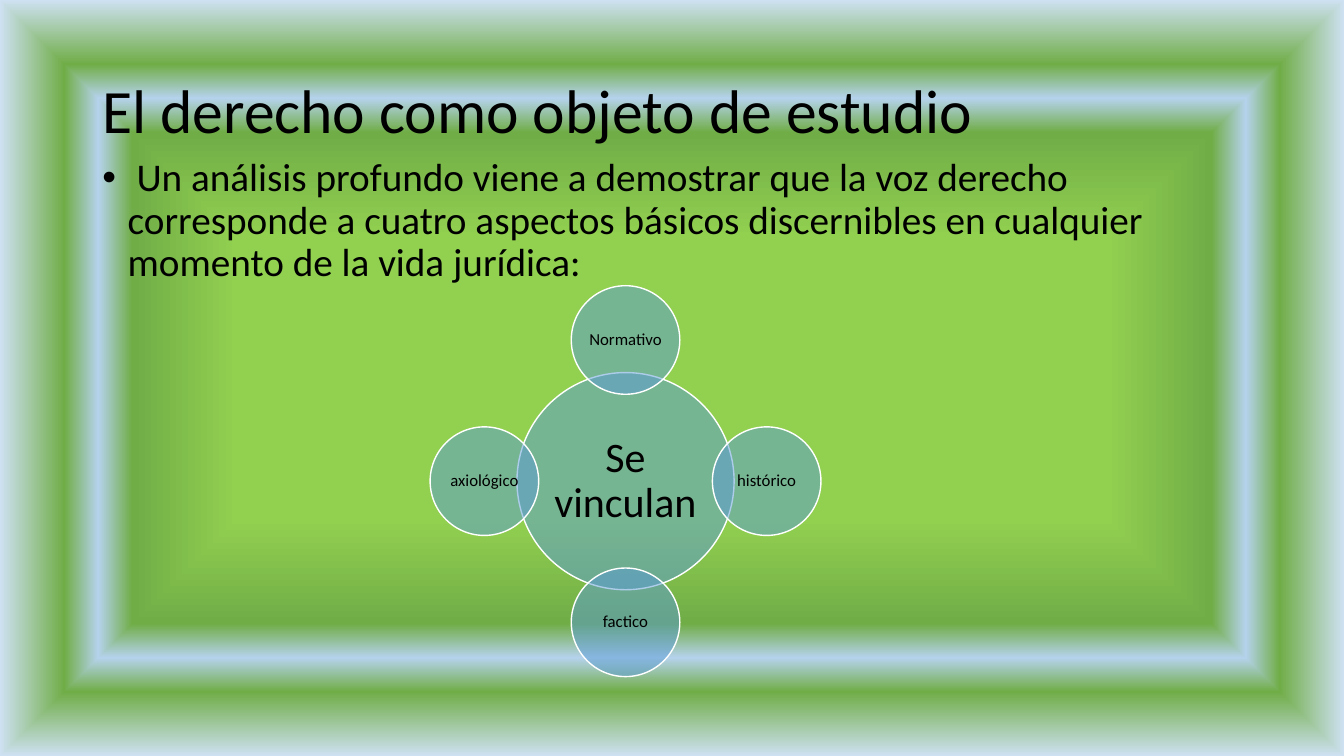
import math

from pptx import Presentation
from pptx import util as u
from pptx.dml.color import RGBColor
from pptx.enum import shapes, text
from pptx.oxml import parse_xml
from pptx.oxml.ns import nsdecls, qn

FONT = "Calibri"
BLACK = "000000"
WHITE = "FFFFFF"
BLUE = "5B9BD5"
GRADIENT = [(0, "92D050"), (37, "92D050"), (65, "70AD47"),
            (74, "B5D2EC"), (83, "70AD47"), (100, "CEE1F2")]
ASPECTS = ["Normativo", "histórico", "factico", "axiológico"]


def color(value):
    return RGBColor.from_string(value)


def paint_background(slide):
    fill = slide.background.fill
    fill.solid()
    stops = "".join(
        f'<a:gs pos="{position * 1000}"><a:srgbClr val="{value}"/></a:gs>'
        for position, value in GRADIENT)
    gradient = parse_xml(
        f'<a:gradFill {nsdecls("a")} rotWithShape="1"><a:gsLst>{stops}</a:gsLst>'
        '<a:path path="shape"><a:fillToRect l="50000" t="50000" r="50000" b="50000"/>'
        '</a:path></a:gradFill>')
    properties = slide.element.find(".//" + qn("p:bgPr"))
    properties.replace(properties[0], gradient)


def write(shape, words, size, anchor, alignment):
    frame = shape.text_frame
    frame.word_wrap = True
    frame.vertical_anchor = anchor
    frame.text = words
    paragraph = frame.paragraphs[0]
    paragraph.alignment = alignment
    paragraph.line_spacing = 0.9
    font = paragraph.runs[0].font
    font.name = FONT
    font.size = u.Pt(size)
    font.color.rgb = color(BLACK)
    return paragraph


def add_title(slide, left, top, width, height):
    box = slide.shapes.add_textbox(*map(u.Cm, (left, top, width, height)))
    write(box, "El derecho como objeto de estudio", 44,
          text.MSO_ANCHOR.MIDDLE, text.PP_ALIGN.LEFT)


def add_body(slide, left, top, width, height):
    box = slide.shapes.add_textbox(*map(u.Cm, (left, top, width, height)))
    paragraph = write(
        box,
        " Un análisis profundo viene a demostrar que la voz derecho corresponde a "
        "cuatro aspectos básicos discernibles en cualquier momento de la vida jurídica:",
        28, text.MSO_ANCHOR.TOP, text.PP_ALIGN.LEFT)
    paragraph.space_before = u.Pt(10)
    properties = paragraph._p.get_or_add_pPr()
    indent = u.Cm(0.64)
    properties.set("marL", str(indent))
    properties.set("indent", str(-indent))
    properties.append(parse_xml(f'<a:buFont {nsdecls("a")} typeface="Arial"/>'))
    properties.append(parse_xml(f'<a:buChar {nsdecls("a")} char="•"/>'))


def add_circle(slide, center_x, center_y, diameter, words, size, inset):
    circle = slide.shapes.add_shape(
        shapes.MSO_SHAPE.OVAL, u.Cm(center_x - diameter / 2),
        u.Cm(center_y - diameter / 2), u.Cm(diameter), u.Cm(diameter))
    circle.shadow.inherit = False
    circle.fill.solid()
    circle.fill.fore_color.rgb = color(BLUE)
    circle.fill._xPr.find(".//" + qn("a:srgbClr")).append(
        parse_xml(f'<a:alpha {nsdecls("a")} val="50000"/>'))
    circle.line.color.rgb = color(WHITE)
    circle.line.width = u.Pt(1)
    frame = circle.text_frame
    frame.margin_left = frame.margin_right = u.Cm(inset)
    frame.margin_top = frame.margin_bottom = u.Cm(inset)
    write(circle, words, size, text.MSO_ANCHOR.MIDDLE, text.PP_ALIGN.CENTER)


def add_radial_diagram(slide, left, top, side):
    center_x, center_y = left + side / 2, top + side / 2
    hub = side / 1.8
    satellite = hub / 2
    orbit = (side - satellite) / 2
    add_circle(slide, center_x, center_y, hub, "Se vinculan", 30, 0.1)
    for index, aspect in enumerate(ASPECTS):
        angle = math.tau * index / len(ASPECTS)
        add_circle(slide, center_x + orbit * math.sin(angle),
                   center_y - orbit * math.cos(angle), satellite, aspect, 12, 0.05)


def main():
    presentation = Presentation()
    presentation.slide_width = u.Cm(33.87)
    presentation.slide_height = u.Cm(19.05)
    slide = presentation.slides.add_slide(presentation.slide_layouts[6])
    paint_background(slide)
    add_title(slide, 2.33, 1.01, 29.21, 3.68)
    add_body(slide, 2.33, 3.86, 29.21, 13.28)
    add_radial_diagram(slide, 10.84, 7.2, 9.85)
    presentation.save("out.pptx")


if __name__ == "__main__":
    main()
